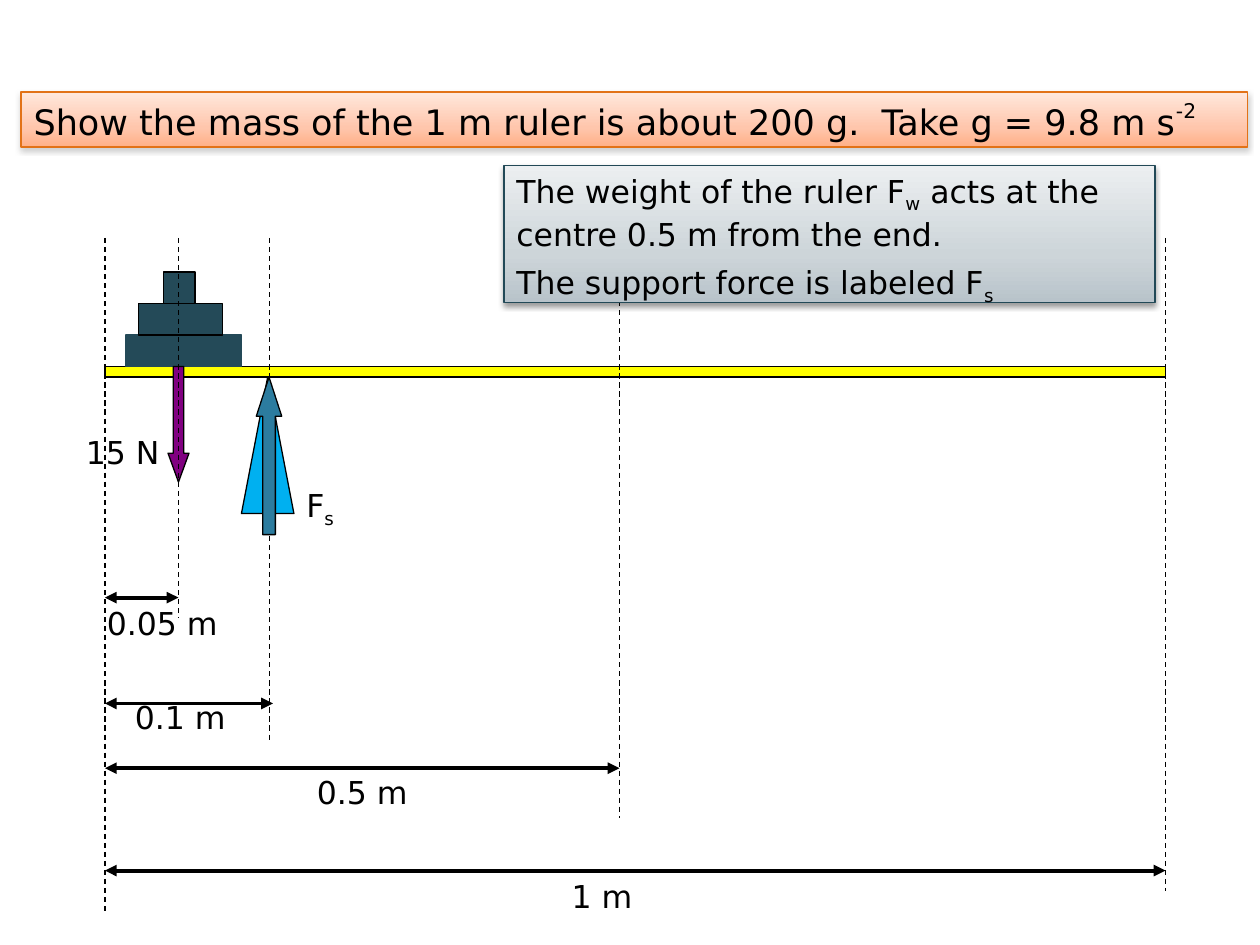
import pptx
import pptx.util
import pptx.dml.color
import pptx.enum.dml
import pptx.enum.shapes
import pptx.enum.text
import pptx.oxml
import pptx.oxml.ns

Pt = pptx.util.Pt
RGB = pptx.dml.color.RGBColor
FORM = pptx.enum.shapes.MSO_SHAPE
FIT = pptx.enum.text.MSO_AUTO_SIZE
NS = pptx.oxml.ns.nsdecls("a")

BLACK = RGB(0x00, 0x00, 0x00)
YELLOW = RGB(0xFF, 0xFF, 0x00)
SKY = RGB(0x00, 0xB0, 0xF0)
SLATE = RGB(0x24, 0x4A, 0x58)
PURPLE = RGB(0x80, 0x00, 0x80)
TEAL = RGB(0x2C, 0x7C, 0x9F)
ORANGE = RGB(0xE2, 0x72, 0x17)
NAVY = RGB(0x22, 0x49, 0x57)
FONT = "DejaVu Sans"

# Key places along the ruler
LEFT, LOAD, PIVOT, MID, RIGHT = 60, 102, 154, 354, 666
TOP, THICK, STEP = 209.5, 6, 18


def write(par, parts, size=18):
    """Fill a paragraph with (text, baseline) parts."""
    for text, base in parts:
        run = par.add_run()
        run.text = text
        run.font.size = Pt(size)
        run.font.name = FONT
        run.font.color.rgb = BLACK
        if base:
            run.font._element.set("baseline", str(base * 1000))


def rule(start, end, width):
    """Draw a straight black line without shadow."""
    line = parts.add_connector(
        pptx.enum.shapes.MSO_CONNECTOR.STRAIGHT,
        Pt(start[0]), Pt(start[1]), Pt(end[0]), Pt(end[1]))
    line.line.color.rgb = BLACK
    line.line.width = Pt(width)
    line._element.spPr.append(pptx.oxml.parse_xml(f"<a:effectLst {NS}/>"))
    return line


deck = pptx.Presentation()
deck.slide_width, deck.slide_height = Pt(720), Pt(540)
slide = deck.slides.add_slide(deck.slide_layouts[5])
parts = slide.shapes.add_group_shape().shapes

# Ruler, support, weights and load arrow
solids = [
    (FORM.RECTANGLE, LEFT, TOP, RIGHT - LEFT, THICK, YELLOW, BLACK, []),
    (FORM.ISOSCELES_TRIANGLE, 138, 215.5, 30, 78, SKY, BLACK, []),
    (FORM.DOWN_ARROW, 96, TOP, 12, 66, PURPLE, BLACK, [0.5, 1.375]),
    (FORM.UP_ARROW, 146.5, 215.5, 14.5, 90, TEAL, BLACK, [0.5, 1.54]),
]
weights = [(72, 66, SLATE), (79, 48, BLACK), (93.5, 18, BLACK)]
for i, (x, wide, edge) in enumerate(weights):
    y = TOP - STEP * (i + 1)
    solids.insert(2 + i, (FORM.RECTANGLE, x, y, wide, STEP, SLATE, edge, []))

# Dashed guides go in just before the support arrow
guides = [(LEFT, 521), (LOAD, 353), (PIVOT, 424), (MID, 467.5), (RIGHT, 509)]
for form, x, y, wide, high, fill, edge, adjust in solids:
    if form == FORM.UP_ARROW:
        for at, end in guides:
            guide = rule((at, 136), (at, end), 0.75)
            guide.line.dash_style = pptx.enum.dml.MSO_LINE.DASH
    solid = parts.add_shape(form, Pt(x), Pt(y), Pt(wide), Pt(high))
    solid.shadow.inherit = False
    solid.fill.solid()
    solid.fill.fore_color.rgb = fill
    solid.line.color.rgb = edge
    solid.line.width = Pt(0.75)
    for i, value in enumerate(adjust):
        solid.adjustments[i] = value

# Distance arrows
for end, y in [(LOAD, 341.5), (156, 402), (MID, 439), (RIGHT, 497.5)]:
    span = rule((LEFT, y), (end, y), 2.25)
    for tip in ("headEnd", "tailEnd"):
        span.line._get_or_add_ln().append(
            pptx.oxml.parse_xml(f'<a:{tip} {NS} type="triangle"/>'))

# Labels
labels = [
    (54, 341.5, 80, [("0.05 m", 0)]),
    (70, 395.5, 68.5, [("0.1 m", 0)]),
    (174, 438, 68.5, [("0.5 m", 0)]),
    (319.5, 497.5, 70.5, [("1 m", 0)]),
    (42, 244, 57.5, [("15 N", 0)]),
    (168, 274, 31, [("F", 0), ("s", -25)]),
]
for x, y, wide, text in labels:
    frame = parts.add_textbox(Pt(x), Pt(y), Pt(wide), Pt(29)).text_frame
    frame.word_wrap = text[0][0] == "1 m"
    frame.auto_size = FIT.SHAPE_TO_FIT_TEXT
    write(frame.paragraphs[0], text)

# Title and note panels
note = slide.shapes.add_shape(FORM.RECTANGLE, 0, 0, 0, 0)
panels = [
    (slide.shapes.title, (12, 52.5, 701, 31.5), ORANGE, 90, "808080", 20, 0,
     [(0, "FFE8DD"), (65, "FFC6AC"), (100, "FFB088")],
     [[("Show the mass of the 1 m ruler is about 200 g.  Take g = 9.8 m s", 0),
       ("-2", 50)]]),
    (note, (288, 94.5, 372, 78.5), NAVY, 270, "000000", 18, 6,
     [(0, "B8C3CA"), (35, "CDD5D9"), (100, "ECEFF1")],
     [[("The weight of the ruler F", 0), ("w", -25),
       (" acts at the centre 0.5 m from the end.", 0)],
      [("The support force is labeled F", 0), ("s", -25)]]),
]
for panel, box, edge, angle, shade, size, after, stops, text in panels:
    panel.left, panel.top, panel.width, panel.height = map(Pt, box)
    props = panel._element.spPr
    marks = "".join(f'<a:gs pos="{pos * 1000}"><a:srgbClr val="{tone}"/></a:gs>'
                    for pos, tone in stops)
    panel.fill.gradient()
    old = props.find(pptx.oxml.ns.qn("a:gradFill"))
    props.replace(old, pptx.oxml.parse_xml(
        f'<a:gradFill {NS} rotWithShape="1"><a:gsLst>{marks}</a:gsLst>'
        f'<a:lin ang="{angle * 60000}" scaled="0"/></a:gradFill>'))
    panel.line.color.rgb = edge
    panel.line.width = Pt(0.75)
    panel.shadow.inherit = False
    props.find(pptx.oxml.ns.qn("a:effectLst")).append(pptx.oxml.parse_xml(
        f'<a:outerShdw {NS} blurRad="{Pt(3.1)}" dist="{Pt(1.6)}" dir="5400000"'
        f' rotWithShape="0"><a:srgbClr val="{shade}"><a:alpha val="38000"/>'
        '</a:srgbClr></a:outerShdw>'))
    frame = panel.text_frame
    frame.word_wrap = True
    frame.auto_size = FIT.NONE
    frame.vertical_anchor = pptx.enum.text.MSO_ANCHOR.TOP
    for i, line in enumerate(text):
        par = frame.add_paragraph() if i else frame.paragraphs[0]
        par.alignment = pptx.enum.text.PP_ALIGN.LEFT
        par.space_after = Pt(after)
        write(par, line, size)

deck.save("out.pptx")
